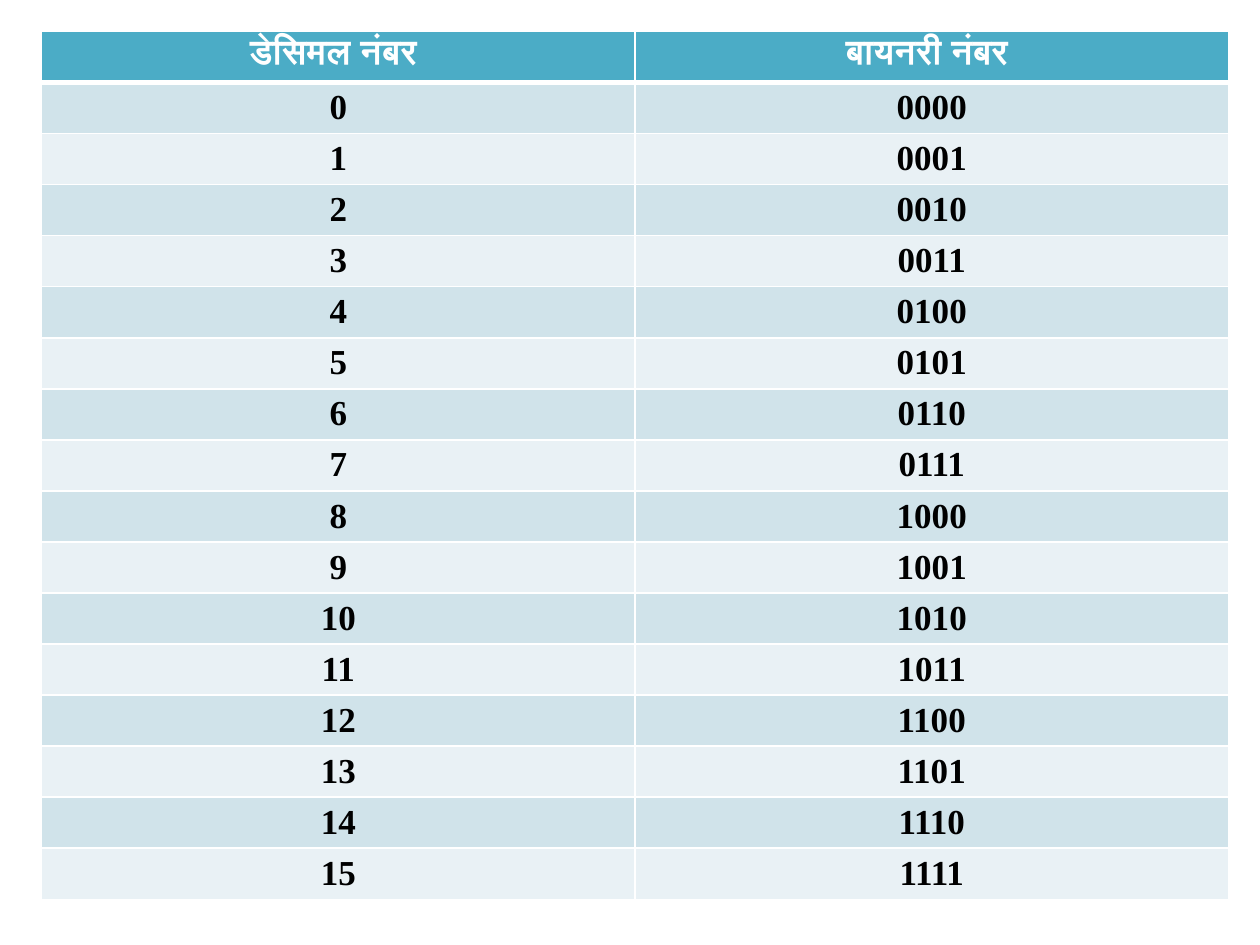
from lxml import etree
from pptx import Presentation, util as u
from pptx.dml.color import RGBColor
from pptx.enum import text
from pptx.oxml import ns

# Content
HEADS = ("डेसिमल नंबर ", "बायनरी नंबर ")
ROWS = [HEADS] + [(str(n), f"{n:04b}") for n in range(16)]

# Look
HUES = {"head": "4BACC6", "odd": "D0E3EA", "even": "E9F1F5",
        "line": "FFFFFF", "light": "FFFFFF", "dark": "000000"}
LEFT, TOP, WIDTH, HEIGHT = (u.Inches(n) for n in (0.33, 0.25, 9.42, 6.89))
THIN, THICK = 1, 3


def hue(name):
    return RGBColor.from_string(HUES[name])


def edge(cell, side, size):
    props = cell._tc.get_or_add_tcPr()
    line = etree.SubElement(props, ns.qn(f"a:ln{side}"), w=str(u.Pt(size)))
    fill = etree.SubElement(line, ns.qn("a:solidFill"))
    etree.SubElement(fill, ns.qn("a:srgbClr"), val=HUES["line"])


def dress(cell, words, row):
    head = row == 0
    # Borders go ahead of the fill; the rule under the header is thick
    sizes = {"L": THIN, "R": THIN,
             "T": THICK if row == 1 else THIN,
             "B": THICK if head else THIN}
    for side, size in sizes.items():
        edge(cell, side, size)
    cell.fill.solid()
    cell.fill.fore_color.rgb = hue("head" if head else "odd" if row % 2 else "even")

    # Text
    cell.margin_left = cell.margin_right = u.Inches(0.07)
    cell.margin_top = cell.margin_bottom = 0
    para = cell.text_frame.paragraphs[0]
    para.alignment = text.PP_ALIGN.CENTER
    para.line_spacing = 1.15
    run = para.add_run()
    run.text = words
    run.font.name = "Calibri" if head else "Times New Roman"
    run.font.size = u.Pt(20)
    run.font.bold = True
    run.font.color.rgb = hue("light" if head else "dark")


def main():
    deck = Presentation()
    deck.slide_width, deck.slide_height = u.Inches(10), u.Inches(7.5)
    slide = deck.slides.add_slide(deck.slide_layouts[6])

    # Number table, with equal rows and columns
    table = slide.shapes.add_table(
        len(ROWS), len(HEADS), LEFT, TOP, WIDTH, HEIGHT).table
    for row, pair in enumerate(ROWS):
        for col, words in enumerate(pair):
            dress(table.cell(row, col), words, row)

    deck.save("out.pptx")


if __name__ == "__main__":
    main()
